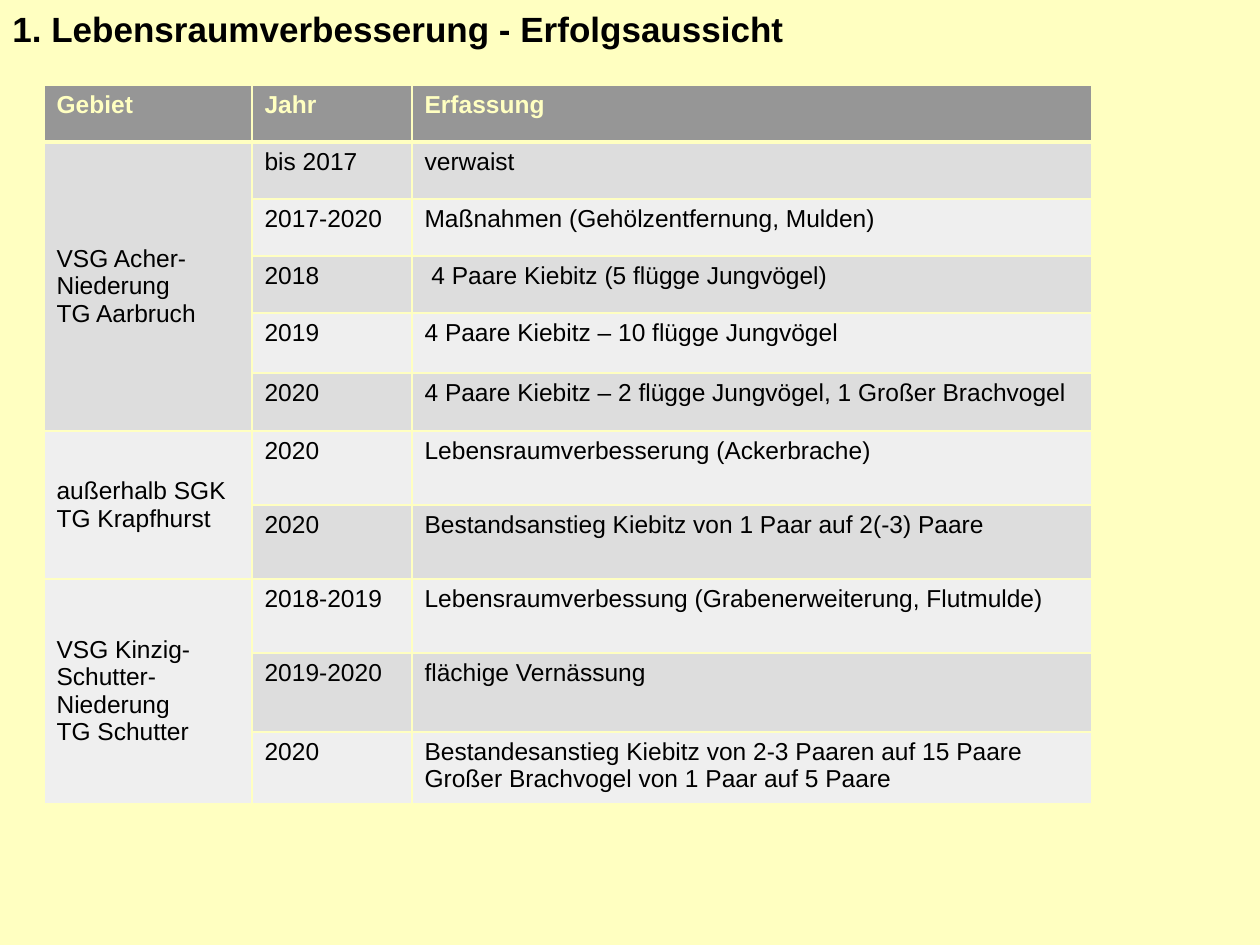
from lxml.etree import SubElement
from pptx import Presentation
from pptx.dml.color import RGBColor
from pptx.enum.text import MSO_ANCHOR, MSO_AUTO_SIZE
from pptx.oxml.ns import qn
from pptx.util import Emu, Pt

CREAM = RGBColor(0xFF, 0xFF, 0xC1)
BLACK = RGBColor(0x00, 0x00, 0x00)
HEADER_GREY = RGBColor(0x96, 0x96, 0x96)
DARK_BAND = RGBColor(0xDD, 0xDD, 0xDD)
LIGHT_BAND = RGBColor(0xEF, 0xEF, 0xEF)

TITLE_FORMAT = {"name": "Arial", "size": Pt(20), "bold": True}
HEADER_FORMAT = {"name": "Arial", "size": Pt(14), "bold": True}
BODY_FORMAT = {"name": "Arial", "size": Pt(14), "bold": False}

COLUMN_WIDTHS = [208, 160, 680]
ROW_HEIGHTS = [57] * 4 + [60, 58] + [74] * 3 + [79, 69]
HEADINGS = ["Gebiet", "Jahr", "Erfassung"]
AREAS = [
    ("VSG Acher-Niederung\nTG Aarbruch", [
        ("bis 2017", "verwaist"),
        ("2017-2020", "Maßnahmen (Gehölzentfernung, Mulden)"),
        ("2018", " 4 Paare Kiebitz (5 flügge Jungvögel)"),
        ("2019", "4 Paare Kiebitz – 10 flügge Jungvögel"),
        ("2020", "4 Paare Kiebitz – 2 flügge Jungvögel, 1 Großer Brachvogel"),
    ]),
    ("außerhalb SGK\nTG Krapfhurst", [
        ("2020", "Lebensraumverbesserung (Ackerbrache)"),
        ("2020", "Bestandsanstieg Kiebitz von 1 Paar auf 2(-3) Paare"),
    ]),
    ("VSG Kinzig-Schutter-Niederung\nTG Schutter", [
        ("2018-2019", "Lebensraumverbessung (Grabenerweiterung, Flutmulde)"),
        ("2019-2020", "flächige Vernässung"),
        ("2020", "Bestandesanstieg Kiebitz von 2-3 Paaren auf 15 Paare\n"
                 "Großer Brachvogel von 1 Paar auf 5 Paare"),
    ]),
]


def px(n):
    return Emu(round(n * 914400 / 126))


def write_text(tf, text, fmt, color):
    tf.text = text
    for p in tf.paragraphs:
        for r in p.runs:
            for key, value in fmt.items():
                setattr(r.font, key, value)
            r.font.color.rgb = color


def add_title(s, text):
    sp = s.shapes.add_textbox(px(0), px(1), px(1226), px(55))
    tf = sp.text_frame
    tf.word_wrap = True
    tf.auto_size = MSO_AUTO_SIZE.SHAPE_TO_FIT_TEXT
    write_text(tf, text, TITLE_FORMAT, BLACK)


def set_borders(cell, widths):
    tc_pr = cell._tc.get_or_add_tcPr()
    for side, width in widths.items():
        ln = SubElement(tc_pr, qn(f"a:ln{side}"), w=str(Pt(width)))
        fill = SubElement(ln, qn("a:solidFill"))
        SubElement(fill, qn("a:srgbClr"), val=str(CREAM))


def style_cell(cell, fill, top=1, bottom=1):
    set_borders(cell, {"L": 1, "R": 1, "T": top, "B": bottom})
    cell.fill.solid()
    cell.fill.fore_color.rgb = fill


def fill_header(table):
    for cell, heading in zip(table.rows[0].cells, HEADINGS):
        style_cell(cell, HEADER_GREY, bottom=3)
        write_text(cell.text_frame, heading, HEADER_FORMAT, CREAM)


def band(row):
    return DARK_BAND if row % 2 else LIGHT_BAND


def fill_area(table, start, area, records):
    for row, record in enumerate(records, start):
        top = 3 if row == 1 else 1
        style_cell(table.cell(row, 0), band(start), top)
        for col, text in enumerate(record, 1):
            cell = table.cell(row, col)
            style_cell(cell, band(row), top)
            write_text(cell.text_frame, text, BODY_FORMAT, BLACK)
    area_cell = table.cell(start, 0)
    area_cell.merge(table.cell(start + len(records) - 1, 0))
    area_cell.vertical_anchor = MSO_ANCHOR.MIDDLE
    write_text(area_cell.text_frame, area, BODY_FORMAT, BLACK)


def add_survey_table(s):
    table = s.shapes.add_table(
        len(ROW_HEIGHTS), len(COLUMN_WIDTHS), px(44), px(85),
        px(sum(COLUMN_WIDTHS)), px(sum(ROW_HEIGHTS))).table
    for column, width in zip(table.columns, COLUMN_WIDTHS):
        column.width = px(width)
    for row, height in zip(table.rows, ROW_HEIGHTS):
        row.height = px(height)
    fill_header(table)
    start = 1
    for area, records in AREAS:
        fill_area(table, start, area, records)
        start += len(records)


def main():
    prs = Presentation()
    prs.slide_width, prs.slide_height = px(1260), px(945)
    s = prs.slides.add_slide(prs.slide_layouts[6])
    s.background.fill.solid()
    s.background.fill.fore_color.rgb = CREAM
    add_title(s, "1. Lebensraumverbesserung - Erfolgsaussicht")
    add_survey_table(s)
    prs.save("out.pptx")


if __name__ == "__main__":
    main()
